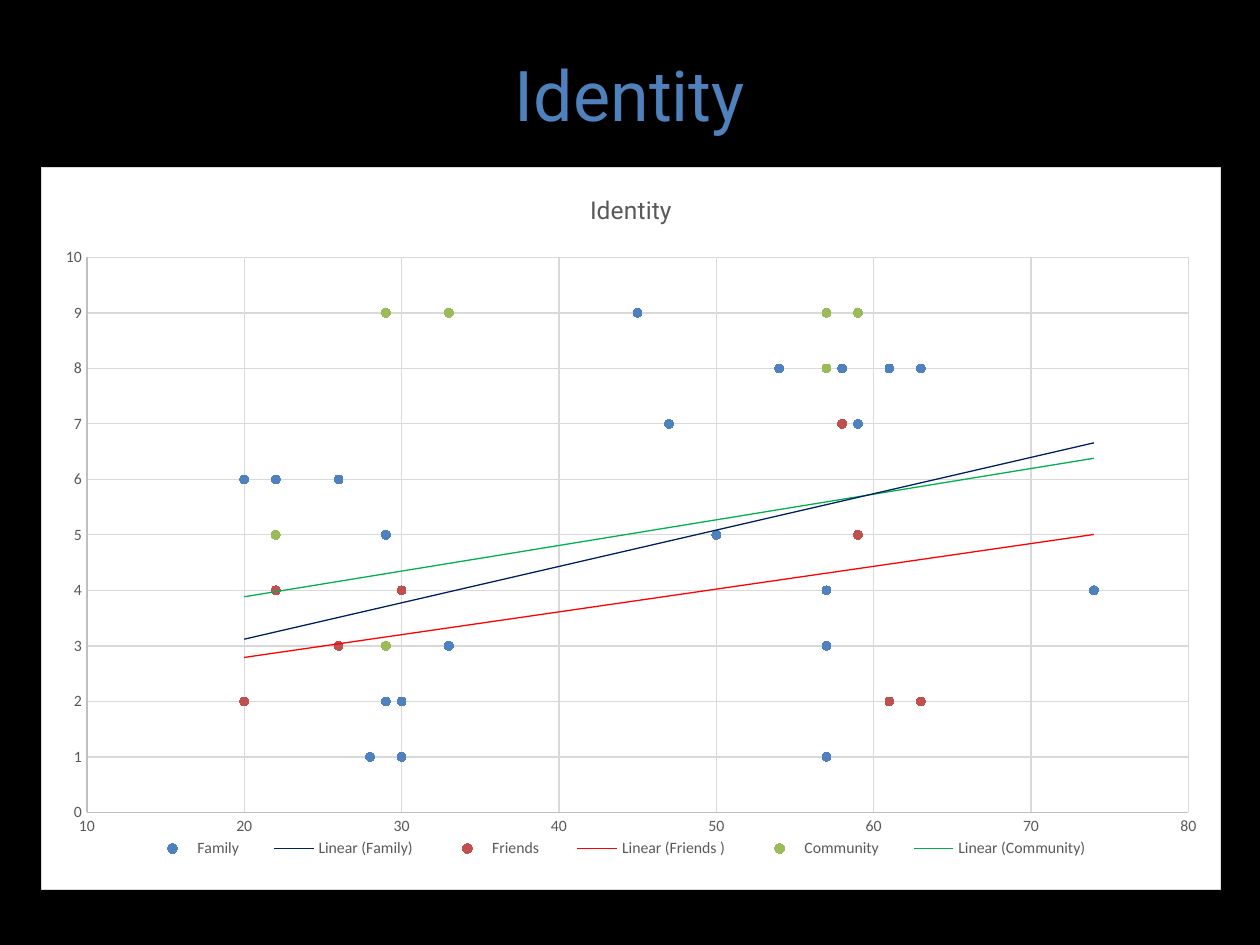
import pptx
import pptx.chart.data
import pptx.dml.color
import pptx.enum.chart
import pptx.enum.text
import pptx.oxml
import pptx.oxml.ns
import pptx.util
from pptx.util import Cm

COLORS = {
    "background": "000000", "heading": "4F81BD", "panel": "FFFFFF",
    "label": "595959", "axis": "BFBFBF", "grid": "D9D9D9",
    "Family": "4F81BD", "Friends ": "C0504D", "Community": "9BBB59",
}
TRENDS = {"Family": "002060", "Friends ": "FF0000", "Community": "00B050"}
AGES = [20, 22, 26, 28, 29, 29, 29, 29, 29, 30, 30, 33,
        45, 47, 50, 54, 57, 57, 57, 58, 59, 61, 63, 74]
SCORES = {
    "Family": [6, 6, 6, 1, 2, 2, 2, 2, 5, 1, 2, 3,
               9, 7, 5, 8, 3, 4, 1, 8, 7, 8, 8, 4],
    "Friends ": [2, 4, 3, 1, 2, 2, 2, 2, 5, 4, 2, 3,
                 9, 7, 5, 8, 3, 4, 1, 7, 5, 2, 2, 4],
    "Community": [2, 5, 3, 1, 9, 2, 3, 2, 5, 4, 2, 9,
                  9, 7, 5, 8, 8, 9, 1, 7, 9, 2, 2, 4],
}
CHART_SIZE = (Cm(23.8), Cm(14.58))
PLOT_BOX = (Cm(0.92), Cm(1.81), Cm(22.23), Cm(11.21))
LEGEND_BOX = (Cm(1.65), Cm(13.25), Cm(20.02), Cm(1))
NAMESPACES = pptx.oxml.ns.nsdecls("c", "a")


def rgb(name):
    """Return the palette colour with this name."""
    return pptx.dml.color.RGBColor.from_string(COLORS[name])


def style_font(font, size, color, face="Calibri"):
    """Set size, colour and typeface of a font."""
    font.size = pptx.util.Pt(size)
    font.color.rgb = rgb(color)
    font.name = face
    font.bold = False


def line_xml(color):
    """Return the XML of a thin solid line."""
    return f'<a:ln w="9525"><a:solidFill><a:srgbClr val="{color}"/></a:solidFill></a:ln>'


def layout_element(box, target=""):
    """Return a manual layout for a box measured inside the chart."""
    modes = "".join(f'<c:{side}Mode val="edge"/>' for side in "xy")
    sizes = "".join(f'<c:{side} val="{length / whole}"/>'
                    for side, length, whole in zip("xywh", box, CHART_SIZE * 2))
    return pptx.oxml.parse_xml(
        f'<c:layout {NAMESPACES}><c:manualLayout>{target}{modes}{sizes}</c:manualLayout></c:layout>')


def add_heading(slide, text):
    """Add the centred slide heading."""
    frame = slide.shapes.add_textbox(Cm(1.27), Cm(0.76), Cm(22.86), Cm(2.24)).text_frame
    frame.word_wrap = True
    frame.vertical_anchor = pptx.enum.text.MSO_ANCHOR.MIDDLE
    paragraph = frame.paragraphs[0]
    paragraph.alignment = pptx.enum.text.PP_ALIGN.CENTER
    run = paragraph.add_run()
    run.text = text
    style_font(run.font, 40, "heading", "Roboto")


def style_axis(axis, low, high, step):
    """Set the scale, lines and labels of an axis."""
    axis.minimum_scale, axis.maximum_scale, axis.major_unit = low, high, step
    axis.major_tick_mark = axis.minor_tick_mark = pptx.enum.chart.XL_TICK_MARK.NONE
    axis.has_major_gridlines = True
    for line, color in ((axis.format.line, "axis"), (axis.major_gridlines.format.line, "grid")):
        line.color.rgb = rgb(color)
        line.width = pptx.util.Pt(0.75)
    style_font(axis.tick_labels.font, 9, "label")


def style_series(series):
    """Give a series round markers and a linear trend line."""
    series.format.line.fill.background()
    marker = series.marker
    marker.style = pptx.enum.chart.XL_MARKER_STYLE.CIRCLE
    marker.size = 5
    marker.format.fill.solid()
    marker.format.fill.fore_color.rgb = rgb(series.name)
    marker.format.line.color.rgb = rgb(series.name)
    trend = pptx.oxml.parse_xml(
        f'<c:trendline {NAMESPACES}><c:spPr>{line_xml(TRENDS[series.name])}</c:spPr>'
        '<c:trendlineType val="linear"/><c:dispRSqr val="0"/><c:dispEq val="0"/></c:trendline>')
    series._element.find(pptx.oxml.ns.qn("c:xVal")).addprevious(trend)


def style_legend(legend):
    """Place the legend below the plot and set its text."""
    legend.position = pptx.enum.chart.XL_LEGEND_POSITION.BOTTOM
    legend.include_in_layout = False
    style_font(legend.font, 9, "label")
    for previous in legend._element.findall(pptx.oxml.ns.qn("c:layout")):
        legend._element.remove(previous)
    legend._element.find(pptx.oxml.ns.qn("c:legendPos")).addnext(layout_element(LEGEND_BOX))


def style_panel(chart):
    """Fill and frame the chart and place its plot area."""
    panel = pptx.oxml.parse_xml(
        f'<c:spPr {NAMESPACES}><a:solidFill><a:srgbClr val="{COLORS["panel"]}"/></a:solidFill>'
        f'{line_xml(COLORS["grid"])}</c:spPr>')
    chart._chartSpace.chart.addnext(panel)
    plot_area = chart._chartSpace.chart.plotArea
    for previous in plot_area.findall(pptx.oxml.ns.qn("c:layout")):
        plot_area.remove(previous)
    plot_area.insert(0, layout_element(PLOT_BOX, '<c:layoutTarget val="inner"/>'))


def add_scatter(slide, title):
    """Add the scatter chart of scores by age."""
    data = pptx.chart.data.XyChartData()
    for group, scores in SCORES.items():
        points = data.add_series(group)
        for age, score in zip(AGES, scores):
            points.add_data_point(age, score)
    chart = slide.shapes.add_chart(
        pptx.enum.chart.XL_CHART_TYPE.XY_SCATTER,
        Cm(0.82), Cm(3.37), *CHART_SIZE, data).chart
    style_font(chart.font, 10, "background")
    chart.has_title = True
    run = chart.chart_title.text_frame.paragraphs[0].add_run()
    run.text = title
    style_font(run.font, 14, "label", "Roboto")
    chart.chart_title.include_in_layout = False
    chart.has_legend = True
    style_legend(chart.legend)
    style_axis(chart.category_axis, 10, 80, 10)
    style_axis(chart.value_axis, 0, 10, 1)
    chart.plots[0].vary_by_categories = False
    for series in chart.plots[0].series:
        style_series(series)
    style_panel(chart)


def main():
    """Build and save the slide."""
    deck = pptx.Presentation()
    deck.slide_width, deck.slide_height = Cm(25.4), Cm(19.05)
    slide = deck.slides.add_slide(deck.slide_layouts[6])
    slide.background.fill.solid()
    slide.background.fill.fore_color.rgb = rgb("background")
    add_heading(slide, "Identity")
    add_scatter(slide, "Identity")
    deck.save("out.pptx")


if __name__ == "__main__":
    main()
